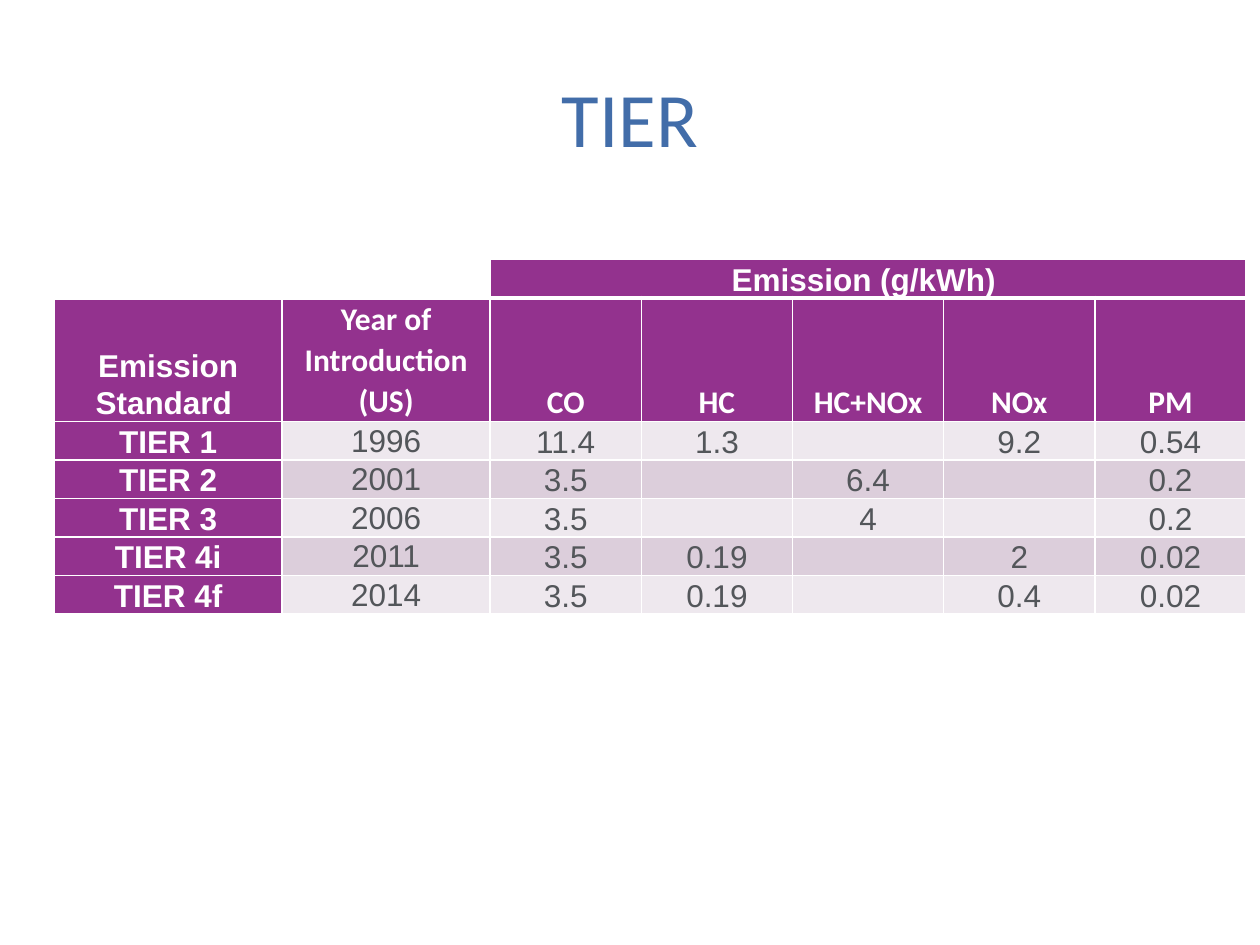
import pptx
import pptx.dml.color
import pptx.enum.text
import pptx.oxml
import pptx.oxml.ns
import pptx.util
from pptx.util import Inches

PURPLE, WHITE, GREY, BLUE = "93328E", "FFFFFF", "53565A", "426DA9"
BANDS = ["EEE8EE", "DCCEDB"]
ANCHOR = pptx.enum.text.MSO_ANCHOR
CENTER = pptx.enum.text.PP_ALIGN.CENTER

COLUMN_WIDTHS = [1.81, 1.65] + [1.2] * 5
ROW_HEIGHTS = [0.3, 0.96] + [0.3] * 5
ROWS = [
    ["", "", "Emission (g/kWh) ", "", "", "", ""],
    ["Emission Standard ", "Year of Introduction (US)", "CO", "HC", "HC+NOx", "NOx", "PM"],
    ["TIER 1", "1996", "11.4", "1.3", "", "9.2", "0.54"],
    ["TIER 2", "2001", "3.5", "", "6.4", "", "0.2"],
    ["TIER 3", "2006", "3.5", "", "4", "", "0.2"],
    ["TIER 4i", "2011", "3.5", "0.19", "", "2", "0.02"],
    ["TIER 4f", "2014", "3.5", "0.19", "", "0.4", "0.02"],
]


def rgb(color):
    return pptx.dml.color.RGBColor.from_string(color)


def set_attributes(target, values):
    for name, value in values.items():
        setattr(target, name, value)


def format_font(font, color, **values):
    set_attributes(font, values)
    font.color.rgb = rgb(color)


def set_borders(cell, widths):
    properties = cell._tc.get_or_add_tcPr()
    for position, (side, width) in enumerate(widths.items()):
        line = pptx.oxml.parse_xml(
            f'<a:ln{side} {pptx.oxml.ns.nsdecls("a")} w="{pptx.util.Pt(width)}">'
            f'<a:solidFill><a:srgbClr val="{WHITE}"/></a:solidFill></a:ln{side}>')
        properties.insert(position, line)


def cell_fill(row, column):
    if row == 0 and column < 2:
        return WHITE
    if row < 2 or column == 0:
        return PURPLE
    return BANDS[row % 2]


def fill_cell(cell, text, row, column):
    is_header = row < 2 or column == 0
    is_year = column == 1 and row > 0
    set_attributes(cell, {
        "margin_left": Inches(0.07), "margin_right": Inches(0.07),
        "margin_top": 0, "margin_bottom": 0,
        "vertical_anchor": ANCHOR.TOP if is_year else ANCHOR.BOTTOM,
    })
    cell.fill.solid()
    cell.fill.fore_color.rgb = rgb(cell_fill(row, column))
    # A thicker rule runs below the top row
    set_borders(cell, {"L": 1, "R": 1, "T": 3 if row == 1 else 1, "B": 3 if row == 0 else 1})
    if text:
        paragraph = cell.text_frame.paragraphs[0]
        set_attributes(paragraph, {"alignment": CENTER, "line_spacing": 1.07})
        run = paragraph.add_run()
        run.text = text
        format_font(run.font, WHITE if is_header else GREY, bold=is_header,
                    size=pptx.util.Pt(18),
                    name="Calibri" if row == 1 and column > 0 else "Arial")


def add_title(slide, left, top, width, height):
    title = slide.shapes.title
    set_attributes(title, {"left": left, "top": top, "width": width, "height": height})
    title.text_frame.text = "TIER"
    title.text_frame.vertical_anchor = ANCHOR.MIDDLE
    paragraph = title.text_frame.paragraphs[0]
    paragraph.alignment = CENTER
    format_font(paragraph.runs[0].font, BLUE, size=pptx.util.Pt(44), name="Calibri")


def add_emission_table(slide, left, top):
    table = slide.shapes.add_table(
        len(ROWS), len(COLUMN_WIDTHS), left, top,
        Inches(sum(COLUMN_WIDTHS)), Inches(sum(ROW_HEIGHTS))).table
    for column, width in zip(table.columns, COLUMN_WIDTHS):
        column.width = Inches(width)
    for row, height in zip(table.rows, ROW_HEIGHTS):
        row.height = Inches(height)
    for row, texts in enumerate(ROWS):
        for column, text in enumerate(texts):
            fill_cell(table.cell(row, column), text, row, column)
    # One heading spans the five emission columns
    table.cell(0, 2).merge(table.cell(0, 6))


def main():
    presentation = pptx.Presentation()
    presentation.slide_width, presentation.slide_height = Inches(10), Inches(7.5)
    slide = presentation.slides.add_slide(presentation.slide_layouts[5])
    add_title(slide, Inches(0.5), Inches(0.3), Inches(9), Inches(1.25))
    add_emission_table(slide, Inches(0.43), Inches(2.06))
    presentation.save("out.pptx")


if __name__ == "__main__":
    main()
